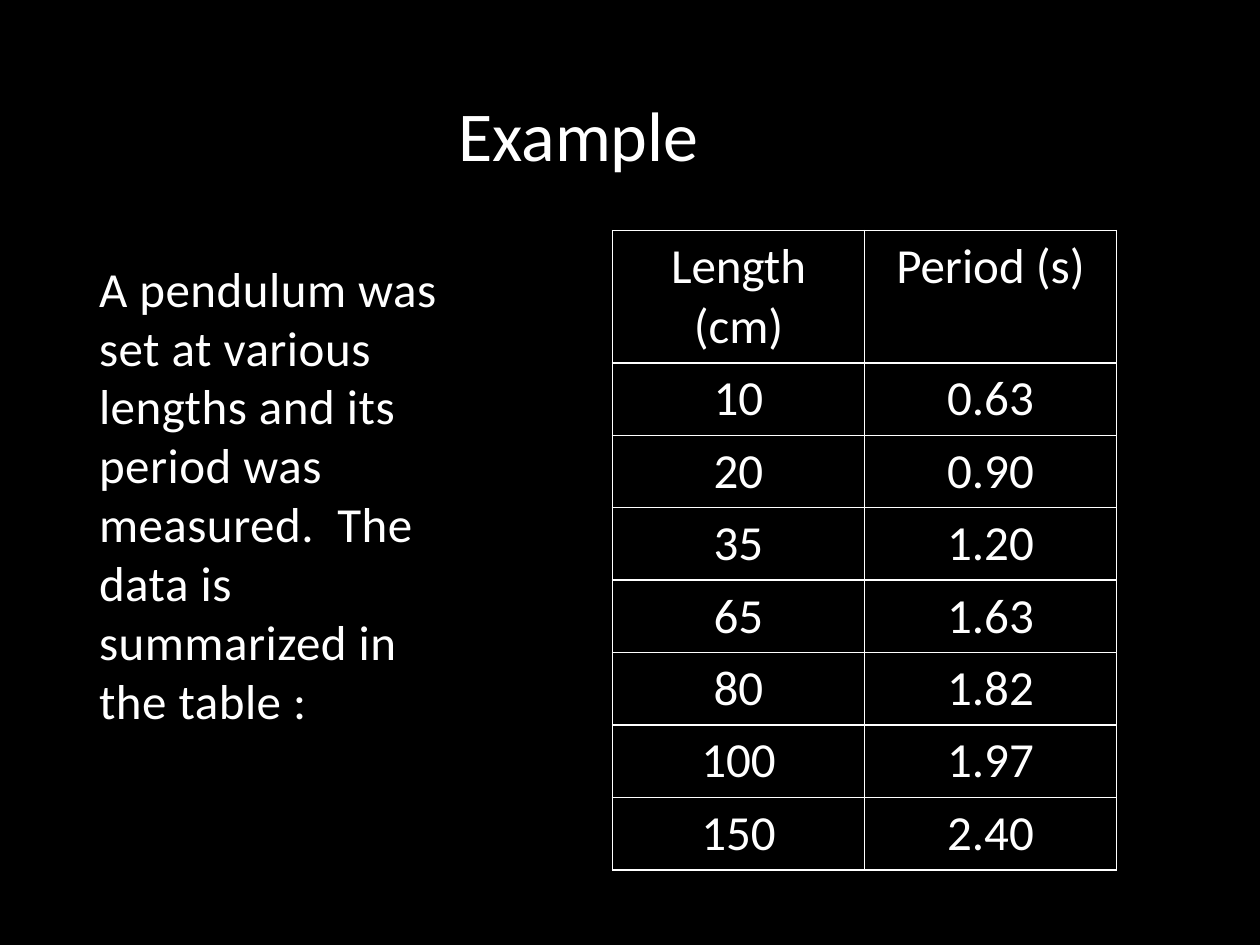
from lxml import etree
from pptx import Presentation
from pptx.dml.color import RGBColor
from pptx.enum.text import MSO_ANCHOR, PP_ALIGN
from pptx.oxml.ns import qn
from pptx.util import Pt

BLACK = RGBColor(0x00, 0x00, 0x00)
WHITE = RGBColor(0xFF, 0xFF, 0xFF)
FONT = "Calibri"
LEFT, CENTER = PP_ALIGN.LEFT, PP_ALIGN.CENTER
TOP, BOTTOM = MSO_ANCHOR.TOP, MSO_ANCHOR.BOTTOM

HEADER_HEIGHT, ROW_HEIGHT, COLUMN_WIDTH = 75.6, 41.4, 144
MEASUREMENTS = [
    ("Length (cm)", "Period (s)"),
    ("10", "0.63"),
    ("20", "0.90"),
    ("35", "1.20"),
    ("65", "1.63"),
    ("80", "1.82"),
    ("100", "1.97"),
    ("150", "2.40"),
]


def write_text(frame, text, size=28, align=LEFT, before=0, spacing=0):
    """Put one formatted paragraph into a text frame."""
    para = frame.paragraphs[0]
    para.alignment = align
    para.space_before = Pt(before)
    span = para.add_run()
    span.text = text
    span.font.name = FONT
    span.font.size = Pt(size)
    span.font.color.rgb = WHITE
    if spacing:
        span.font._element.set("spc", str(round(spacing * 100)))


def add_text_box(page, left, top, width, height, text, anchor=TOP,
                 bottom_margin=3.6, **text_format):
    box = page.shapes.add_textbox(Pt(left), Pt(top), Pt(width), Pt(height))
    frame = box.text_frame
    frame.word_wrap = True
    frame.vertical_anchor = anchor
    frame.margin_bottom = Pt(bottom_margin)
    write_text(frame, text, **text_format)


def set_cell_borders(cell, color, width):
    properties = cell._tc.get_or_add_tcPr()
    for position, side in enumerate(("a:lnL", "a:lnR", "a:lnT", "a:lnB")):
        line = etree.Element(qn(side), w=str(Pt(width)))
        fill = etree.SubElement(line, qn("a:solidFill"))
        etree.SubElement(fill, qn("a:srgbClr"), val=str(color))
        properties.insert(position, line)


def add_data_table(page, left, top, rows):
    row_count, column_count = len(rows), len(rows[0])
    heights = [HEADER_HEIGHT] + [ROW_HEIGHT] * (row_count - 1)
    table = page.shapes.add_table(
        row_count, column_count, Pt(left), Pt(top),
        Pt(COLUMN_WIDTH * column_count), Pt(sum(heights))).table
    table.horz_banding = False
    table.first_row = False
    for row, height, values in zip(table.rows, heights, rows):
        row.height = Pt(height)
        for cell, value in zip(row.cells, values):
            cell.fill.background()
            cell.margin_left = cell.margin_right = Pt(5)
            cell.margin_top = cell.margin_bottom = Pt(3.6)
            write_text(cell.text_frame, value, align=CENTER)
            set_cell_borders(cell, WHITE, 1)


def main():
    deck = Presentation()
    deck.slide_width, deck.slide_height = Pt(720), Pt(540)
    page = deck.slides.add_slide(deck.slide_layouts[6])

    # Background
    page.background.fill.solid()
    page.background.fill.fore_color.rgb = BLACK

    # Explanation
    add_text_box(page, 49.5, 144, 226, 342.5,
                 "A pendulum was set at various lengths and its period was "
                 "measured.  The data is summarized in the table :",
                 before=12, spacing=0.3)

    # Title
    add_text_box(page, 28, 18, 605, 84, "Example", anchor=BOTTOM,
                 bottom_margin=1.5, size=40, align=CENTER, before=4)

    # Measured periods
    add_data_table(page, 350, 131.75, MEASUREMENTS)

    deck.save("out.pptx")


if __name__ == "__main__":
    main()
